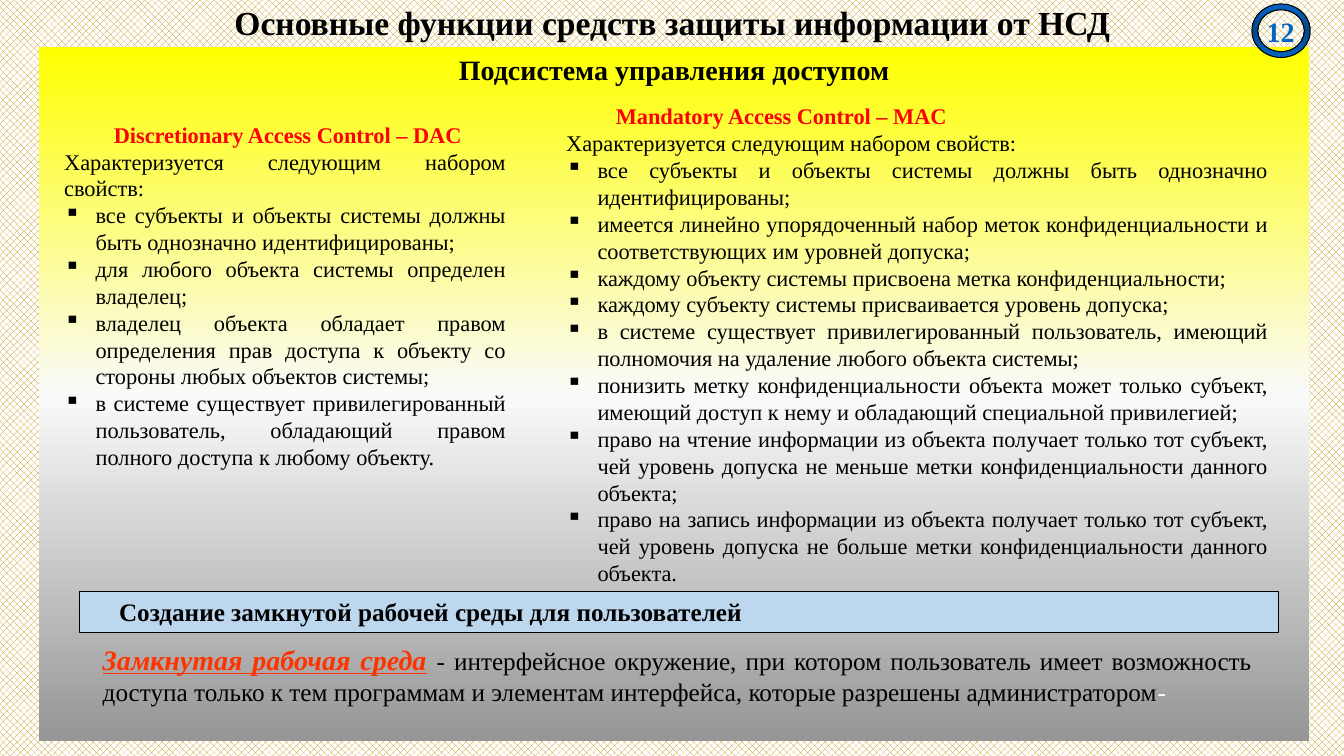
import copy
import pptx
import pptx.util
import pptx.dml.color
import pptx.enum.dml
import pptx.enum.shapes
import pptx.enum.text
import pptx.oxml.ns
import lxml.etree

Cm = pptx.util.Cm
RGB = pptx.dml.color.RGBColor
ALIGN = pptx.enum.text.PP_ALIGN
ANCHOR = pptx.enum.text.MSO_ANCHOR
SHAPE = pptx.enum.shapes.MSO_SHAPE
BLACK = RGB(0x00, 0x00, 0x00)
WHITE = RGB(0xFF, 0xFF, 0xFF)
YELLOW = RGB(0xFF, 0xFF, 0x00)
LIGHT = RGB(0xFA, 0xFA, 0xFA)
GRAY = RGB(0x96, 0x96, 0x96)
SKY = RGB(0xBD, 0xD7, 0xEE)
RED = RGB(0xFF, 0x00, 0x00)
ORANGE = RGB(0xFF, 0x33, 0x00)
BLUE = RGB(0x05, 0x63, 0xC1)
NAVY = RGB(0x04, 0x47, 0x8A)
GOLD = RGB(0xBF, 0x90, 0x00)


def add_par(tf, runs, align=ALIGN.LEFT, left=0, first=0, bullet=None):
    """Fill the empty first paragraph or append one; runs are (text, font values)."""
    p = tf.paragraphs[0] if not tf.text else tf.add_paragraph()
    p.alignment = align
    pPr = p._p.get_or_add_pPr()
    pPr.set("marL", str(Cm(left)))
    pPr.set("indent", str(Cm(first)))
    if bullet:
        bu = lxml.etree.SubElement(pPr, pptx.oxml.ns.qn("a:buChar"))
        bu.set("char", bullet)
    for text, values in runs:
        r = p.add_run()
        r.text = text
        values = {"name": "Times New Roman", "color": BLACK, **values}
        r.font.color.rgb = values.pop("color")
        r.font.size = pptx.util.Pt(values.pop("size"))
        for key, value in values.items():
            setattr(r.font, key, value)
    return p


def fill_gradient(sp, colors):
    """Three even stops from top to bottom."""
    sp.fill.gradient()
    sp.fill.gradient_angle = 270
    last = sp.fill._fill._gradFill.gsLst[-1]
    last.addnext(copy.deepcopy(last))
    for i, (stop, color) in enumerate(zip(sp.fill.gradient_stops, colors)):
        stop.position = i / 2
        stop.color.rgb = color


prs = pptx.Presentation()
prs.slide_width, prs.slide_height = Cm(33.87), Cm(19.05)
s = prs.slides.add_slide(prs.slide_layouts[6])

# Patterned background
bg = s.background.fill
bg.patterned()
bg.pattern = pptx.enum.dml.MSO_PATTERN.PERCENT_50
bg.fore_color.rgb = GOLD
bg.back_color.rgb = WHITE

# Main panel, section bar and number ring
shapes = {}
for name, kind, box in [
    ("panel", SHAPE.RECTANGLE, (0.99, 1.19, 32, 17.48)),
    ("bar", SHAPE.RECTANGLE, (2.01, 14.91, 30.2, 1.02)),
    ("ring", SHAPE.DONUT, (31.55, 0.1, 1.47, 1.35)),
]:
    sp = s.shapes.add_shape(kind, *map(Cm, box))
    sp.shadow.inherit = False
    sp.line.color.rgb = BLACK
    sp.line.width = pptx.util.Pt(0.75)
    sp.text_frame.word_wrap = True
    sp.text_frame.vertical_anchor = ANCHOR.TOP
    shapes[name] = sp
panel, bar, ring = shapes.values()
panel.line.fill.background()
fill_gradient(panel, [YELLOW, LIGHT, GRAY])
add_par(panel.text_frame, [("Подсистема управления доступом", {"size": 20, "bold": True})], ALIGN.CENTER)
bar.fill.solid()
bar.fill.fore_color.rgb = SKY
add_par(bar.text_frame, [("Создание замкнутой рабочей среды для пользователей",
                          {"size": 18, "bold": True})], first=0.74)
ring.adjustments[0] = 0.11
fill_gradient(ring, [BLUE, NAVY, BLUE])

# Text boxes
frames = {}
for name, box, anchor in [
    ("title", (2.34, -0.1, 29.21, 1.45), ANCHOR.MIDDLE),
    ("definition", (2.34, 16.05, 29.46, 1.88), ANCHOR.MIDDLE),
    ("number", (31.8, 0.36, 1.07, 0.86), ANCHOR.TOP),
    ("dac", (1.37, 2.92, 11.63, 9.14), ANCHOR.TOP),
    ("mac", (14.02, 2.46, 18.19, 12.57), ANCHOR.TOP),
]:
    tf = s.shapes.add_textbox(*map(Cm, box)).text_frame
    tf.word_wrap = True
    tf.vertical_anchor = anchor
    frames[name] = tf

# Title, definition and slide number
p = add_par(frames["title"], [("Основные функции средств защиты информации от НСД",
                               {"size": 24, "bold": True})], ALIGN.CENTER)
p.line_spacing = 0.9
add_par(frames["definition"], [
    ("Замкнутая рабочая среда",
     {"size": 20, "bold": True, "italic": True, "underline": True, "color": ORANGE}),
    (" ", {"size": 20, "bold": True}),
    ("- интерфейсное окружение, при котором пользователь имеет возможность доступа только "
     "к тем программам и элементам интерфейса, которые разрешены администратором", {"size": 18}),
    ("-", {"size": 18, "color": WHITE}),
], ALIGN.JUSTIFY)
tf = frames["number"]
tf.margin_right = tf.margin_top = tf.margin_bottom = 0
tf.margin_left = Cm(0.12)
add_par(tf, [("12", {"size": 20, "bold": True, "color": BLUE})])

# Access control models
models = {
    "dac": ("Discretionary Access Control – DAC", [
        "все субъекты и объекты системы должны быть однозначно идентифицированы;",
        "для любого объекта системы определен владелец;",
        "владелец объекта обладает правом определения прав доступа к объекту со стороны любых объектов системы;",
        "в системе существует привилегированный пользователь, обладающий правом полного доступа к любому объекту.",
    ]),
    "mac": ("Mandatory Access Control – MAC", [
        "все субъекты и объекты системы должны быть однозначно идентифицированы;",
        "имеется линейно упорядоченный набор меток конфиденциальности и соответствующих им уровней допуска;",
        "каждому объекту системы присвоена метка конфиденциальности;",
        "каждому субъекту системы присваивается уровень допуска;",
        "в системе существует привилегированный пользователь, имеющий полномочия на удаление любого объекта системы;",
        "понизить метку конфиденциальности объекта может только субъект, имеющий доступ к нему "
        "и обладающий специальной привилегией;",
        "право на чтение информации из объекта получает только тот субъект, чей уровень допуска "
        "не меньше метки конфиденциальности данного объекта;",
        "право на запись информации из объекта получает только тот субъект, чей уровень допуска "
        "не больше метки конфиденциальности данного объекта.",
    ]),
}
for name, (heading, items) in models.items():
    tf = frames[name]
    add_par(tf, [(heading, {"size": 16, "bold": True, "color": RED})], ALIGN.JUSTIFY, first=1.25)
    add_par(tf, [("Характеризуется следующим набором свойств:", {"size": 16})], ALIGN.JUSTIFY)
    for item in items:
        add_par(tf, [(item, {"size": 16})], ALIGN.JUSTIFY, left=0.79, first=-0.79, bullet="▪")

prs.save("out.pptx")
